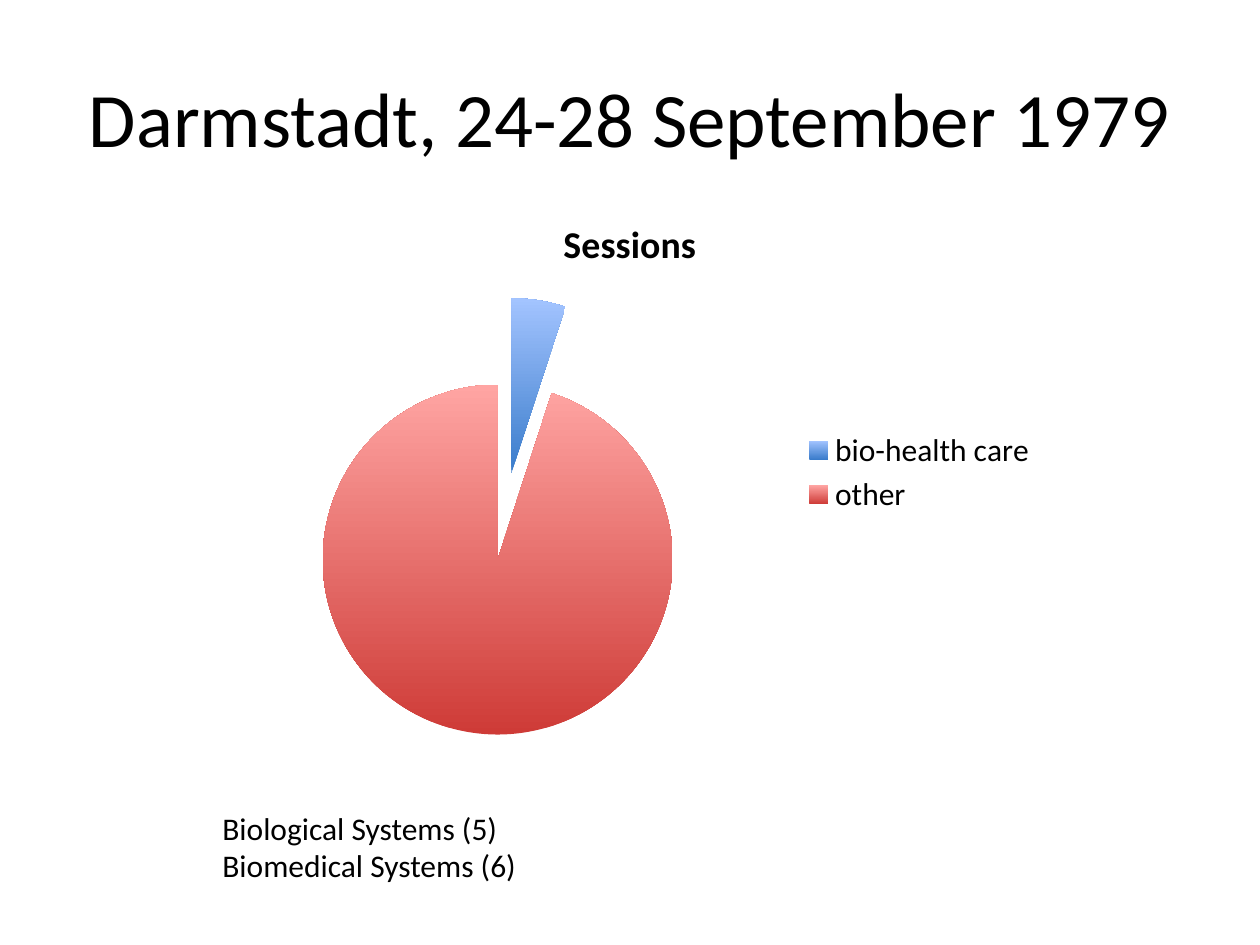
from pptx import Presentation
from pptx.chart.data import CategoryChartData
from pptx.dml.color import RGBColor
from pptx.enum.chart import XL_CHART_TYPE as CT, XL_LEGEND_POSITION as LP
from pptx.enum.text import MSO_ANCHOR as MA, MSO_AUTO_SIZE as AS, PP_ALIGN as PA
from pptx.oxml import parse_xml
from pptx.oxml.ns import nsdecls, qn
from pptx.util import Pt

TITLE = "Darmstadt, 24-28 September 1979"
SERIES = "Sessions"
SLICES = [
    ("bio-health care", 5, ("3A7CCB", "A3C4FF")),
    ("other", 95, ("CE3B37", "FFA5A3")),
]
NOTES = ["Biological Systems (5)", "Biomedical Systems (6)"]
EXPLOSION = 25
BOXES = {
    "title": (36, 21.6, 648, 90),
    "chart": (120, 110, 480, 320),
    "notes": (120, 458.5, 184.5, 51),
}


def rgb(value):
    return RGBColor.from_string(value)


def set_font(font, size, bold=False):
    for name, value in {"name": "Calibri", "size": Pt(size), "bold": bold}.items():
        setattr(font, name, value)
    font.color.rgb = rgb("000000")


def box(name):
    return [Pt(v) for v in BOXES[name]]


def add_title(s):
    sp = s.shapes.title
    sp.left, sp.top, sp.width, sp.height = box("title")
    tf = sp.text_frame
    tf.text = TITLE
    tf.vertical_anchor = MA.MIDDLE
    p = tf.paragraphs[0]
    p.alignment = PA.CENTER
    set_font(p.runs[0].font, 44)


def add_pie(s):
    data = CategoryChartData()
    data.categories = [label for label, _, _ in SLICES]
    data.add_series(SERIES, [value for _, value, _ in SLICES])
    chart = s.shapes.add_chart(CT.PIE, *box("chart"), data).chart
    set_font(chart.font, 18)
    chart.has_title = True
    tf = chart.chart_title.text_frame
    tf.text = SERIES
    set_font(tf.paragraphs[0].runs[0].font, 21.6, bold=True)
    chart.has_legend = True
    chart.legend.position = LP.RIGHT
    chart.legend.include_in_layout = False
    plot = chart.plots[0]
    plot.vary_by_categories = True
    series = plot.series[0]
    tx = series._element.find(qn("c:tx"))
    tx.addnext(parse_xml(f'<c:explosion {nsdecls("c")} val="{EXPLOSION}"/>'))
    for i, (_, _, colors) in enumerate(SLICES):
        fill = series.points[i].format.fill
        fill.gradient()
        fill.gradient_angle = 90
        for stop, color in zip(fill.gradient_stops, colors):
            stop.color.rgb = rgb(color)


def add_notes(s):
    tf = s.shapes.add_textbox(*box("notes")).text_frame
    tf.word_wrap = False
    tf.auto_size = AS.SHAPE_TO_FIT_TEXT
    tf.text = "\n".join(NOTES)
    for p in tf.paragraphs:
        set_font(p.runs[0].font, 18)


def main():
    """Build the conference sessions slide."""
    prs = Presentation()
    prs.slide_width, prs.slide_height = Pt(720), Pt(540)
    s = prs.slides.add_slide(prs.slide_layouts[5])
    add_title(s)
    add_pie(s)
    add_notes(s)
    prs.save("out.pptx")


if __name__ == "__main__":
    main()
